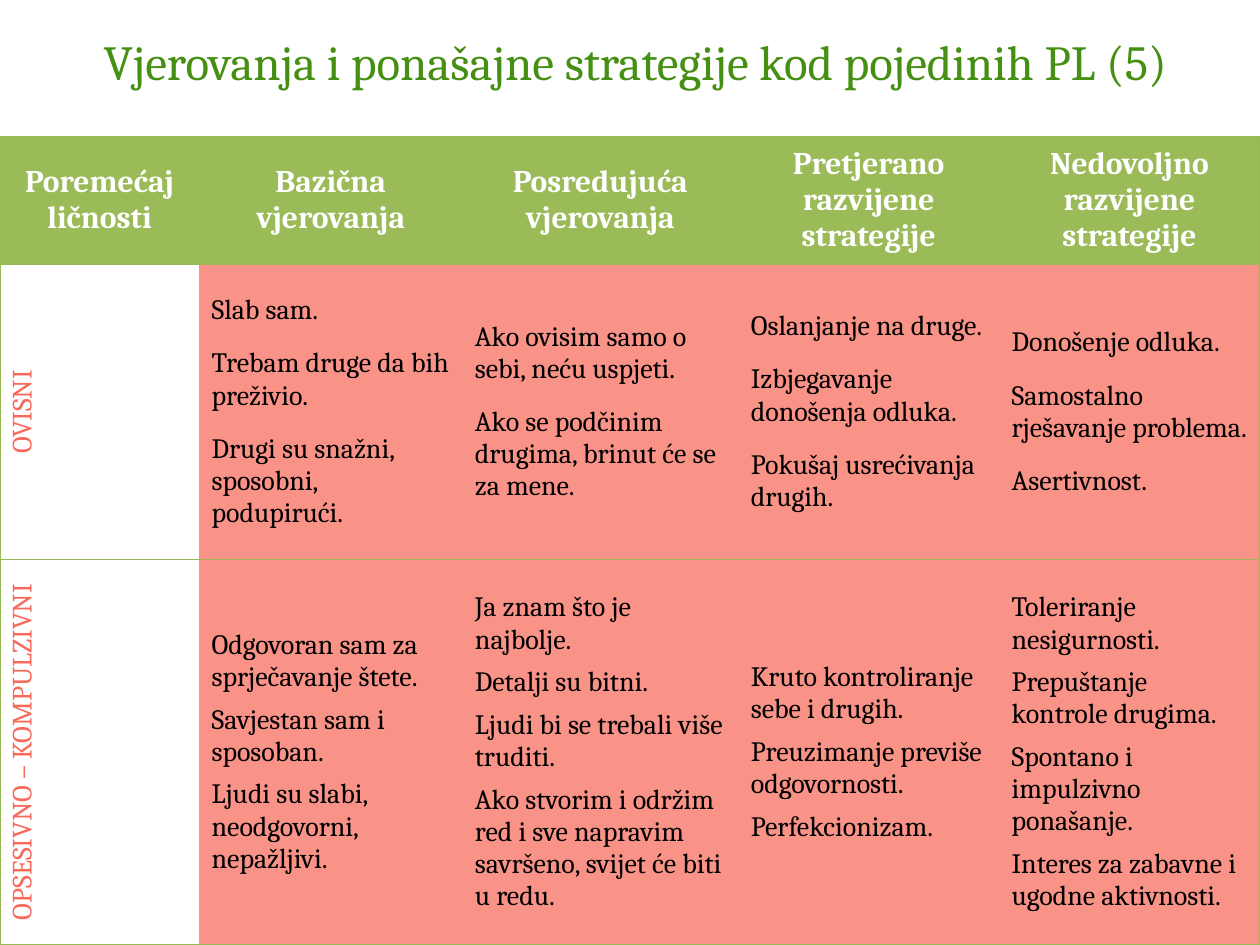
from lxml import etree
from pptx import Presentation
from pptx.dml.color import RGBColor
from pptx.enum.text import MSO_ANCHOR, PP_ALIGN
from pptx.oxml.ns import qn
from pptx.util import Inches, Pt

CENTER, LEFT = PP_ALIGN.CENTER, PP_ALIGN.LEFT
MIDDLE = MSO_ANCHOR.MIDDLE

TITLE = "Vjerovanja i ponašajne strategije kod pojedinih PL (5)"
HEADINGS = [
    "Poremećaj ličnosti", "Bazična vjerovanja", "Posredujuća vjerovanja",
    "Pretjerano razvijene strategije", "Nedovoljno razvijene strategije",
]
# Disorder, paragraph gap in points, then the statements of each column
DISORDERS = [
    ("OVISNI", 12, [
        ["Slab sam.", "Trebam druge da bih preživio.",
         "Drugi su snažni, sposobni, podupirući."],
        ["Ako ovisim samo o sebi, neću uspjeti.",
         "Ako se podčinim drugima, brinut će se za mene."],
        ["Oslanjanje na druge.", "Izbjegavanje donošenja odluka.",
         "Pokušaj usrećivanja drugih."],
        ["Donošenje odluka.", "Samostalno rješavanje problema.", "Asertivnost."],
    ]),
    ("OPSESIVNO – KOMPULZIVNI", 6, [
        ["Odgovoran sam za sprječavanje štete.", "Savjestan sam i sposoban.",
         "Ljudi su slabi, neodgovorni, nepažljivi."],
        ["Ja znam što je najbolje.", "Detalji su bitni.",
         "Ljudi bi se trebali više truditi.",
         "Ako stvorim i održim red i sve napravim savršeno, svijet će biti u redu."],
        ["Kruto kontroliranje sebe i drugih.", "Preuzimanje previše odgovornosti.",
         "Perfekcionizam."],
        ["Toleriranje nesigurnosti.", "Prepuštanje kontrole drugima.",
         "Spontano i impulzivno ponašanje.",
         "Interes za zabavne i ugodne aktivnosti."],
    ]),
]
COLUMN_SHARES = [0.158, 0.209, 0.219, 0.207, 0.207]
ROW_SHARES = [0.136, 0.312, 0.408]


def color(hex_code):
    return RGBColor.from_string(hex_code)


class SlideBuilder:
    FONT = "Cambria"
    GRID = "98B955"
    FORMATS = {
        "title": {"size": Pt(28), "bold": False, "ink": "458F13", "align": CENTER},
        "heading": {"size": Pt(18), "bold": True, "ink": "FFFFFF", "align": CENTER,
                    "fill": "9BBB59"},
        "disorder": {"size": Pt(16), "bold": False, "ink": "F76A5B", "align": CENTER},
        "statement": {"size": Pt(16), "bold": False, "ink": "000000", "align": LEFT,
                      "fill": "F99287"},
    }

    def __init__(self, presentation):
        self.width = presentation.slide_width
        self.height = presentation.slide_height
        self.slide = presentation.slides.add_slide(presentation.slide_layouts[5])

    def box(self, left, top, width, height):
        """Turn shares of the slide into lengths."""
        return (int(left * self.width), int(top * self.height),
                int(width * self.width), int(height * self.height))

    def add_lines(self, frame, lines, role, gap=0):
        style = self.FORMATS[role]
        for index, line in enumerate(lines):
            paragraph = frame.paragraphs[0] if index == 0 else frame.add_paragraph()
            paragraph.alignment = style["align"]
            paragraph.space_before = Pt(gap if index else 0)
            run = paragraph.add_run()
            run.text = line
            run.font.name = self.FONT
            run.font.color.rgb = color(style["ink"])
            for key in ("size", "bold"):
                setattr(run.font, key, style[key])

    def title(self, text, *shares):
        title = self.slide.shapes.title
        title.left, title.top, title.width, title.height = self.box(*shares)
        title.text_frame.word_wrap = True
        title.text_frame.vertical_anchor = MIDDLE
        self.add_lines(title.text_frame, [text], "title")

    def table(self, left, top, column_shares, row_shares):
        area = self.box(left, top, sum(column_shares), sum(row_shares))
        table = self.slide.shapes.add_table(
            len(row_shares), len(column_shares), *area).table
        table.first_row = table.horz_banding = False
        for column, share in zip(table.columns, column_shares):
            column.width = int(share * self.width)
        for row, share in zip(table.rows, row_shares):
            row.height = int(share * self.height)
        return table

    def cell(self, table, row, column, lines, role, gap=0):
        cell = table.cell(row, column)
        cell.vertical_anchor = MIDDLE
        self.add_lines(cell.text_frame, lines, role, gap)
        last = len(table.columns) - 1
        self.borders(cell, {"L": column == 0, "R": column == last, "T": True, "B": True})
        fill = self.FORMATS[role].get("fill")
        if fill:
            cell.fill.solid()
            cell.fill.fore_color.rgb = color(fill)
        else:
            cell.fill.background()
        if role == "disorder":
            cell._tc.get_or_add_tcPr().set("vert", "vert270")

    def borders(self, cell, sides):
        properties = cell._tc.get_or_add_tcPr()
        for side, drawn in sides.items():
            line = etree.SubElement(properties, qn(f"a:ln{side}"), w=str(Pt(0.75)))
            if drawn:
                solid = etree.SubElement(line, qn("a:solidFill"))
                etree.SubElement(solid, qn("a:srgbClr"), val=self.GRID)
            else:
                etree.SubElement(line, qn("a:noFill"))


def main():
    presentation = Presentation()
    presentation.slide_width, presentation.slide_height = Inches(10), Inches(7.5)
    builder = SlideBuilder(presentation)
    table = builder.table(0, 0.144, COLUMN_SHARES, ROW_SHARES)
    for column, heading in enumerate(HEADINGS):
        builder.cell(table, 0, column, [heading], "heading")
    for row, (disorder, gap, statements) in enumerate(DISORDERS, start=1):
        builder.cell(table, row, 0, [disorder], "disorder")
        for column, lines in enumerate(statements, start=1):
            builder.cell(table, row, column, lines, "statement", gap)
    builder.title(TITLE, 0.025, 0.023, 0.958, 0.083)
    presentation.save("out.pptx")


if __name__ == "__main__":
    main()
